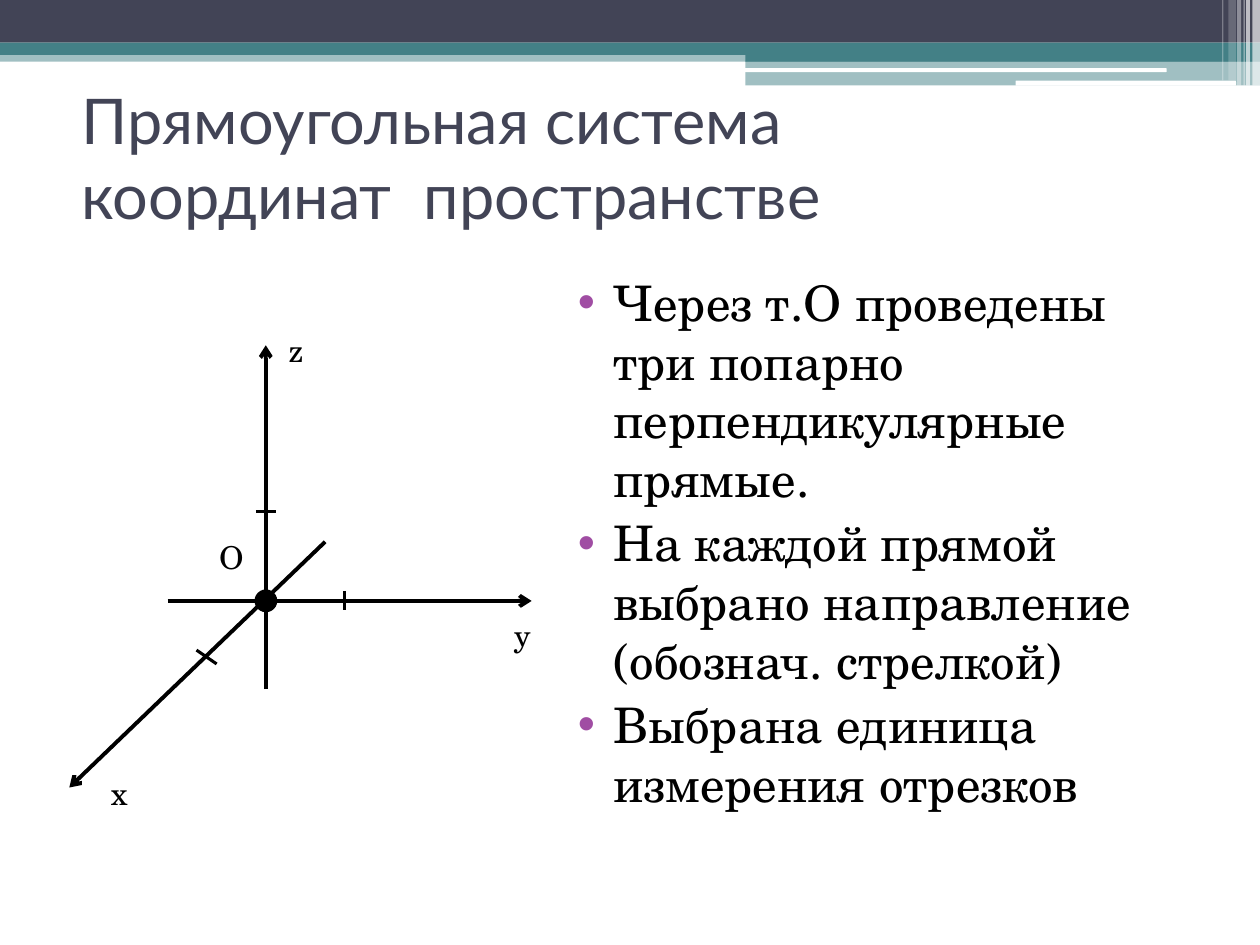
from lxml import etree
from pptx import Presentation
from pptx.dml.color import RGBColor
from pptx.enum import shapes, text
from pptx.oxml.ns import qn
from pptx.util import Pt

SLATE = RGBColor(0x42, 0x44, 0x56)
TEAL = RGBColor(0x43, 0x80, 0x86)
WHITE = RGBColor(0xFF, 0xFF, 0xFF)
BLACK = RGBColor(0, 0, 0)
PURPLE = "A04DA3"
SERIF = "TeX Gyre Schola"
RECT = shapes.MSO_SHAPE.RECTANGLE
ROUND = shapes.MSO_SHAPE.ROUNDED_RECTANGLE

prs = Presentation()
prs.slide_width, prs.slide_height = Pt(720), Pt(540)
slide = prs.slides.add_slide(prs.slide_layouts[6])


def add_block(kind, box, color, opacity=100):
    block = slide.shapes.add_shape(kind, *map(Pt, box))
    block.shadow.inherit = False
    block.fill.solid()
    block.fill.fore_color.rgb = color
    block.line.fill.background()
    if opacity < 100:
        srgb = block.fill._xPr.find(".//" + qn("a:srgbClr"))
        etree.SubElement(srgb, qn("a:alpha"), val=str(opacity * 1000))
    return block


def add_text(box, paragraphs, font, anchor=text.MSO_ANCHOR.TOP):
    frame = slide.shapes.add_textbox(*map(Pt, box)).text_frame
    frame.word_wrap = True
    frame.vertical_anchor = anchor
    frame.text = "\n".join(paragraphs)
    for paragraph in frame.paragraphs:
        run_font = paragraph.runs[0].font
        run_font.color.rgb = font["color"]
        for name in ("name", "size"):
            setattr(run_font, name, font[name])
    return frame


# Header bands
for kind, box, color, opacity in [
    (RECT, (0, 28.8, 720, 6.5), TEAL, 50),
    (RECT, (0, 0, 720, 24.4), SLATE, 100),
    (RECT, (0, 24.4, 720, 7), TEAL, 100),
    (RECT, (426, 28, 294, 7.2), TEAL, 100),
    (RECT, (426, 34.6, 294, 14.2), TEAL, 50),
    (ROUND, (425.5, 39, 241.2, 2.2), WHITE, 100),
    (ROUND, (580.3, 46.1, 126, 2.9), WHITE, 100),
]:
    add_block(kind, box, color, opacity)

# Pale vertical stripes in the top right corner
for left, width, height, opacity in [
    (715.7, 4.3, 49, 65),
    (712.1, 2.2, 49, 65),
    (710.6, 0.7, 49, 60),
    (707, 2.2, 49, 40),
    (702, 4.3, 46, 20),
    (698.4, 0.7, 46, 30),
]:
    add_block(RECT, (left, 0, width, height), WHITE, opacity)

# Title
add_text((39.6, 44.6, 590.4, 90), ["Прямоугольная система координат  пространстве"],
         {"name": "Lato", "size": Pt(36), "color": SLATE}, text.MSO_ANCHOR.MIDDLE)

# Properties of the coordinate system
properties = add_text(
    (314.6, 152, 378, 365.8),
    ["Через т.О проведены три попарно перпендикулярные прямые.",
     "На каждой прямой выбрано направление (обознач. стрелкой)",
     "Выбрана единица измерения отрезков"],
    {"name": SERIF, "size": Pt(28), "color": BLACK})
for paragraph in properties.paragraphs:
    paragraph.space_before = Pt(3)
    p_pr = paragraph._p.get_or_add_pPr()
    p_pr.set("marL", str(Pt(28.8)))
    p_pr.set("indent", str(-Pt(20.2)))
    bullet_color = etree.SubElement(p_pr, qn("a:buClr"))
    etree.SubElement(bullet_color, qn("a:srgbClr"), val=PURPLE)
    etree.SubElement(p_pr, qn("a:buFont"), typeface="Arial")
    etree.SubElement(p_pr, qn("a:buChar"), char="•")

# Axes z, y, x with arrowheads, then unit marks on y, x, z
for ends, weight, is_axis in [
    ((151.9, 393.8, 151.9, 197.3), 2.25, True),
    ((95.8, 343.4, 303.8, 343.4), 2.25, True),
    ((185.8, 309.6, 39.6, 450), 2.25, True),
    ((197, 337.7, 197, 348.5), 1.75, False),
    ((112.3, 371.5, 123.8, 379.4), 1.75, False),
    ((146.2, 292.3, 157.7, 292.3), 1.75, False),
]:
    stroke = slide.shapes.add_connector(shapes.MSO_CONNECTOR.STRAIGHT, *map(Pt, ends))
    stroke.line.color.rgb = BLACK
    stroke.line.width = Pt(weight)
    if is_axis:
        etree.SubElement(stroke.line._get_or_add_ln(), qn("a:tailEnd"), type="arrow")
    etree.SubElement(stroke._element.spPr, qn("a:effectLst"))

# Origin
origin = add_block(shapes.MSO_SHAPE.FLOWCHART_CONNECTOR, (146.2, 337.6, 11.5, 11.5), BLACK)
origin.line.color.rgb = BLACK
origin.line.width = Pt(1.5)

# Labels of the origin and the axes
for label, left, top, width in [
    ("О", 118.1, 303.8, 22.3),
    ("z", 157.7, 185.8, 28.1),
    ("y", 286.6, 348.5, 22.3),
    ("x", 56.2, 438.5, 28.1),
]:
    add_text((left, top, width, 28.8), [label],
             {"name": SERIF, "size": Pt(18), "color": BLACK})

prs.save("out.pptx")
